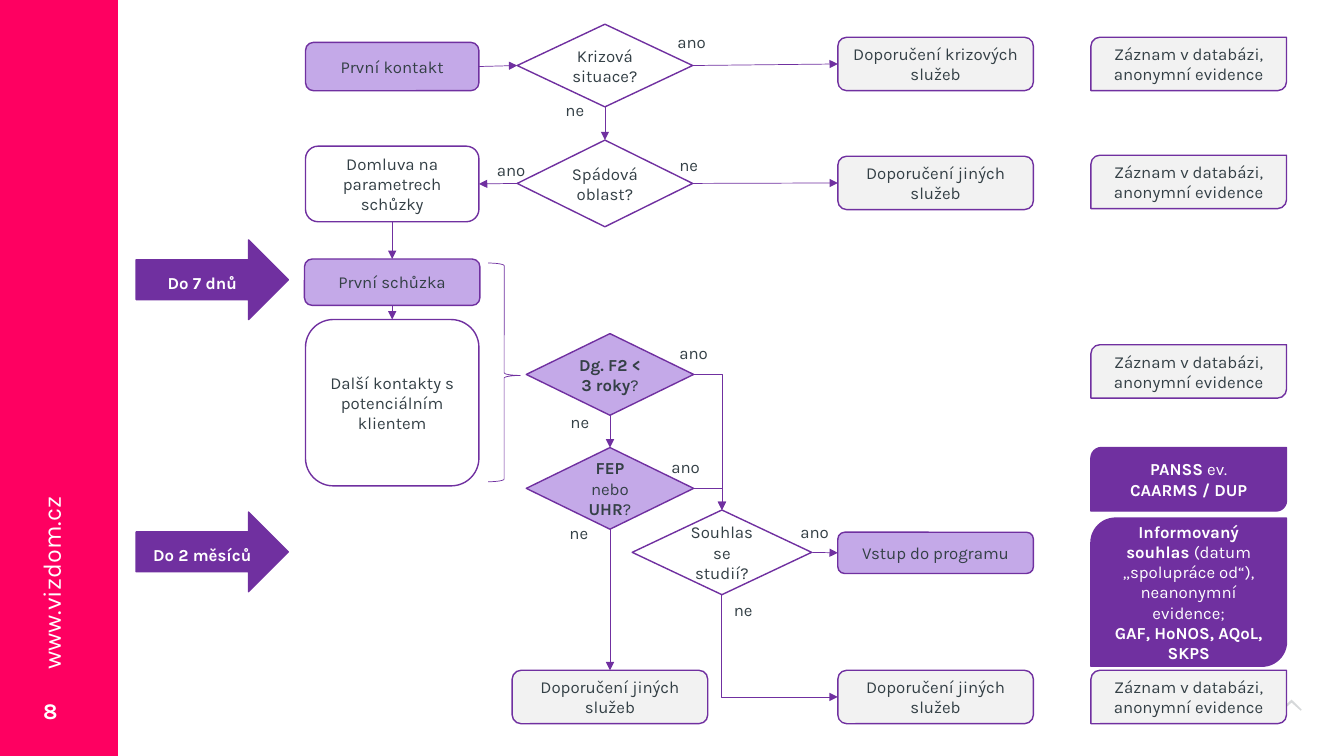
from lxml import etree
from pptx import Presentation
from pptx.dml.color import RGBColor
from pptx.enum.shapes import MSO_CONNECTOR as Connector, MSO_SHAPE as Preset
from pptx.enum.text import MSO_ANCHOR as Anchor, PP_ALIGN as Align
from pptx.oxml.ns import qn
from pptx.util import Inches, Pt

FONT = "Karla"
PINK = RGBColor(0xFE, 0x00, 0x61)
PURPLE = RGBColor(0x70, 0x30, 0xA0)
LILAC = RGBColor(0xC4, 0xA9, 0xE8)
GREY = RGBColor(0xF2, 0xF2, 0xF2)
DARK = RGBColor(0x34, 0x40, 0x46)
WHITE = RGBColor(0xFF, 0xFF, 0xFF)

TOP, LEFT, BOTTOM, RIGHT = range(4)


def write(shape, text, color=DARK, size=12, align=Align.CENTER):
    """Fill a shape with text; parts between ** marks are bold."""
    frame = shape.text_frame
    frame.word_wrap = True
    for index, line in enumerate(text.split("\n")):
        paragraph = frame.paragraphs[0] if index == 0 else frame.add_paragraph()
        paragraph.alignment = align
        font = paragraph.font
        font.name, font.size = FONT, Pt(size)
        font.color.rgb = color
        for position, part in enumerate(line.split("**")):
            if part:
                run = paragraph.add_run()
                run.text = part
                run.font.bold = position % 2 == 1


def add_text(slide, left, top, width, height, text, **style):
    box = slide.shapes.add_textbox(Inches(left), Inches(top), Inches(width), Inches(height))
    write(box, text, align=Align.LEFT, **style)
    return box


def add_box(slide, preset, left, top, width, height, text="", fill=None, line_width=1):
    shape = slide.shapes.add_shape(preset, Inches(left), Inches(top), Inches(width), Inches(height))
    shape.shadow.inherit = False
    if fill is None:
        shape.fill.background()
    else:
        shape.fill.solid()
        shape.fill.fore_color.rgb = fill
    shape.line.color.rgb = PURPLE
    shape.line.width = Pt(line_width)
    shape.text_frame.vertical_anchor = Anchor.MIDDLE
    if text:
        write(shape, text, WHITE if fill == PURPLE else DARK)
    return shape


def add_line(slide, kind, start, end, arrow="tailEnd"):
    connector = slide.shapes.add_connector(kind, *start, *end)
    connector.line.color.rgb = PURPLE
    connector.line.width = Pt(0.5)
    etree.SubElement(connector.line._get_or_add_ln(), qn("a:" + arrow), type="triangle")
    etree.SubElement(connector._element.spPr, qn("a:effectLst"))
    return connector


def join(slide, source, source_side, target, target_side):
    connector = add_line(slide, Connector.STRAIGHT, (0, 0), (0, 0))
    connector.begin_connect(source, source_side)
    connector.end_connect(target, target_side)


def bend(slide, start, end, arrow="tailEnd"):
    """Draw a one-corner line that leaves its start horizontally."""
    connector = add_line(slide, Connector.ELBOW, start, end, arrow)
    connector._element.spPr.find(qn("a:prstGeom")).set("prst", "bentConnector2")


def side_point(shape, side):
    middle_x, middle_y = shape.left + shape.width // 2, shape.top + shape.height // 2
    return {
        TOP: (middle_x, shape.top),
        LEFT: (shape.left, middle_y),
        BOTTOM: (middle_x, shape.top + shape.height),
        RIGHT: (shape.left + shape.width, middle_y),
    }[side]


def draw_sidebar(slide, left, top, width, height):
    band = add_box(slide, Preset.RECTANGLE, left, top, width, height, fill=PINK)
    band.line.fill.background()
    address = add_text(slide, left - 0.68, top + 5.35, 2.38, 0.41,
                       "www.vizdom.cz", color=WHITE, size=18)
    address.rotation = 270
    number = add_text(slide, left + 0.33, top + 6.75, 0.5, 0.6, "**8**", color=WHITE, size=16)
    number.text_frame.vertical_anchor = Anchor.MIDDLE


def draw_chevron(slide, left, top):
    points = [(0.11, 0), (0.21, 0.1), (0.2, 0.11), (0.11, 0.03), (0.02, 0.11), (0, 0.1)]
    corners = [(Inches(left + x), Inches(top + y)) for x, y in points]
    builder = slide.shapes.build_freeform(*corners[0])
    builder.add_line_segments(corners[1:])
    chevron = builder.convert_to_shape()
    chevron.shadow.inherit = False
    chevron.fill.solid()
    chevron.fill.fore_color.rgb = DARK
    color = chevron._element.spPr.find(qn("a:solidFill"))[0]
    etree.SubElement(color, qn("a:alpha"), val="20000")
    chevron.line.fill.background()


def draw_deadlines(slide, left, top):
    for offset, text in ((0, "**Do 7 dnů**"), (2.7, "**Do 2 měsíců**")):
        arrow = add_box(slide, Preset.RIGHT_ARROW, left, top + offset, 1.51, 0.79, text, PURPLE)
        arrow.text_frame.margin_top = Inches(0.11)


def draw_flow(slide, left, top):
    def node(preset, center, offset, width, height, text, fill=None):
        return add_box(slide, preset, left + center - width / 2, top + offset,
                       width, height, text, fill)

    def step(offset, height, text, fill=None, width=1.72):
        return node(Preset.ROUNDED_RECTANGLE, 0.87, offset, width, height, text, fill)

    def decision(center, offset, width, height, text, fill=None):
        return node(Preset.FLOWCHART_DECISION, center, offset, width, height, text, fill)

    def outcome(offset, text, center=6.26, height=0.53, fill=GREY):
        return node(Preset.ROUNDED_RECTANGLE, center, offset, 1.94, height, text, fill)

    other_services = "Doporučení jiných služeb"
    contact = step(0.18, 0.48, "První kontakt", LILAC)
    agreement = step(1.21, 0.75, "Domluva na parametrech schůzky")
    meeting = step(2.33, 0.46, "První schůzka", LILAC, 1.74)
    follow_up = step(2.93, 1.65, "Další kontakty s potenciálním klientem")

    crisis = decision(2.98, 0, 1.74, 0.82, "Krizová situace?")
    district = decision(2.98, 1.15, 1.74, 0.86, "Spádová oblast?")
    diagnosis = decision(3.03, 3.07, 1.66, 0.81, "**Dg. F2 < 3 roky**?", LILAC)
    episode = decision(3.03, 4.2, 1.66, 0.81, "**FEP** nebo **UHR**?", LILAC)
    consent = decision(4.14, 4.82, 1.78, 0.84, "Souhlas se studií?")

    crisis_services = outcome(0.13, "Doporučení krizových služeb")
    out_of_district = outcome(1.31, other_services)
    entry = outcome(5.04, "Vstup do programu", height=0.41, fill=LILAC)
    no_consent = outcome(6.41, other_services)
    no_episode = outcome(6.41, other_services, center=3.03)

    brace = add_box(slide, Preset.RIGHT_BRACE, left + 1.82, top + 2.37, 0.32, 2.17, line_width=0.5)
    brace.adjustments[0], brace.adjustments[1] = 0.083, 0.514

    for link in (
        (contact, RIGHT, crisis, LEFT),
        (crisis, RIGHT, crisis_services, LEFT),
        (crisis, BOTTOM, district, TOP),
        (district, RIGHT, out_of_district, LEFT),
        (district, LEFT, agreement, RIGHT),
        (agreement, BOTTOM, meeting, TOP),
        (meeting, BOTTOM, follow_up, TOP),
        (diagnosis, BOTTOM, episode, TOP),
        (episode, BOTTOM, no_episode, TOP),
        (consent, RIGHT, entry, LEFT),
    ):
        join(slide, *link)
    for source in (diagnosis, episode):
        bend(slide, side_point(source, RIGHT), side_point(consent, TOP))
    bend(slide, side_point(no_consent, LEFT), side_point(consent, BOTTOM), "headEnd")

    answers = {
        "ano": [(3.6, 0.03), (1.81, 1.3), (3.62, 3.11), (3.54, 4.24), (4.82, 4.89)],
        "ne": [(2.49, 0.7), (3.62, 1.25), (2.54, 3.8), (2.53, 4.9), (4.16, 5.66)],
    }
    for answer, places in answers.items():
        for x, y in places:
            add_text(slide, left + x, top + y, 0.6, 0.3, answer)


def draw_records(slide, left, top):
    anonymous = "Záznam v databázi, anonymní evidence"
    informed = ("**Informovaný souhlas **(datum „spolupráce od“), neanonymní evidence;\n"
                "**GAF, HoNOS, AQoL, SKPS**")
    for offset, height, text, fill in (
        (0, 0.53, anonymous, GREY),
        (1.17, 0.53, anonymous, GREY),
        (3.05, 0.53, anonymous, GREY),
        (4.07, 0.63, "**PANSS** ev.\n**CAARMS / DUP**", PURPLE),
        (4.77, 1.47, informed, PURPLE),
        (6.28, 0.53, anonymous, GREY),
    ):
        add_box(slide, Preset.ROUND_2_DIAG_RECTANGLE, left, top + offset, 1.94, height, text, fill)


def main():
    presentation = Presentation()
    presentation.slide_width, presentation.slide_height = Inches(13.33), Inches(7.5)
    slide = presentation.slides.add_slide(presentation.slide_layouts[6])
    draw_chevron(slide, 12.7, 6.94)
    draw_sidebar(slide, 0, 0, 1.17, 7.5)
    draw_deadlines(slide, 1.35, 2.38)
    draw_flow(slide, 3.02, 0.24)
    draw_records(slide, 10.82, 0.37)
    presentation.save("out.pptx")


if __name__ == "__main__":
    main()
